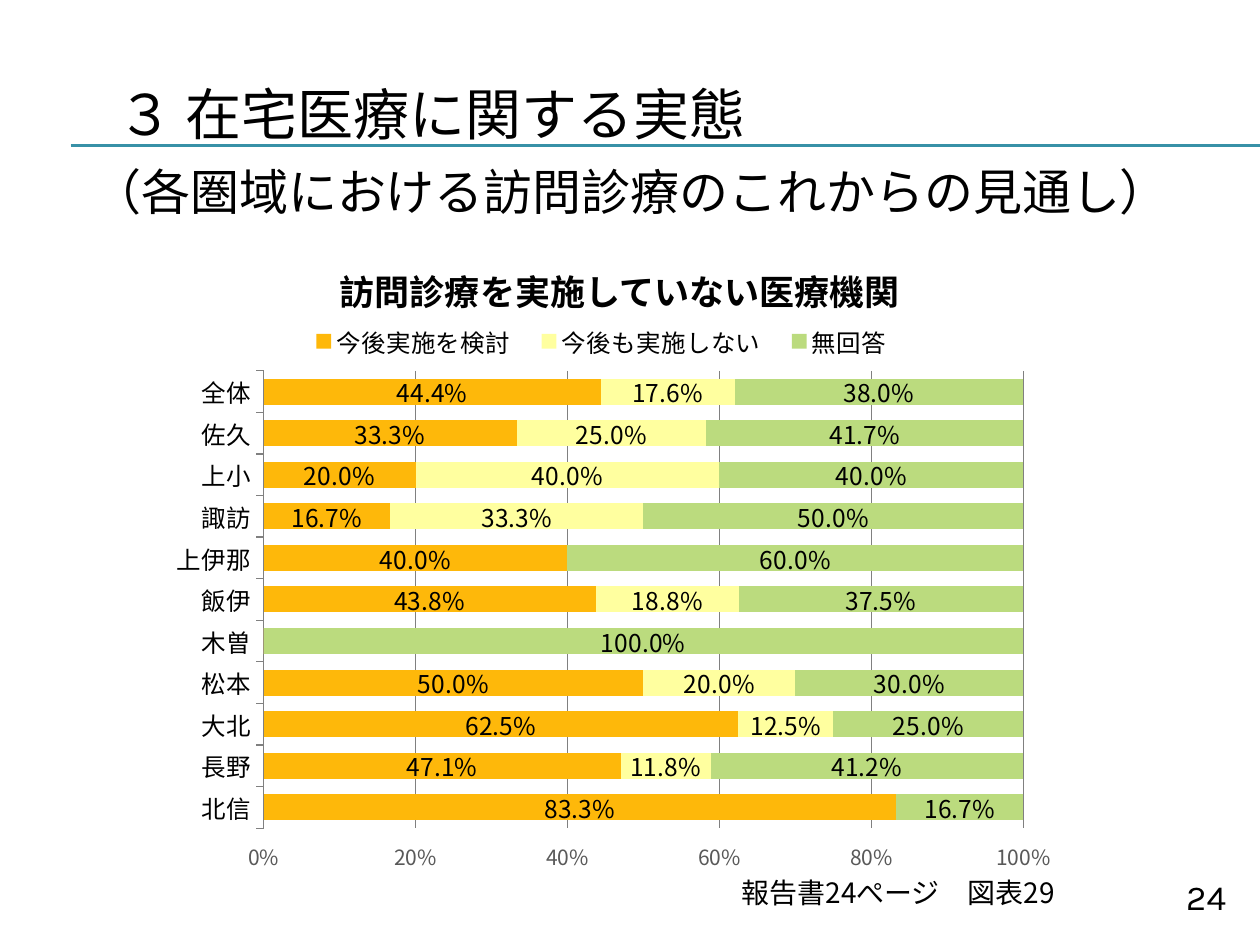
from dataclasses import dataclass

from lxml.etree import SubElement
from pptx import Presentation
from pptx.chart.data import CategoryChartData
from pptx.dml.color import RGBColor
from pptx.enum.chart import (XL_CHART_TYPE, XL_LABEL_POSITION, XL_LEGEND_POSITION,
                             XL_TICK_LABEL_POSITION, XL_TICK_MARK)
from pptx.enum.shapes import MSO_CONNECTOR
from pptx.enum.text import MSO_ANCHOR, PP_ALIGN
from pptx.oxml import parse_xml
from pptx.oxml.ns import nsdecls, qn
from pptx.util import Inches, Pt


@dataclass(frozen=True)
class Theme:
    text: str = "000000"
    muted: str = "595959"
    rule: str = "3891A7"
    grid: str = "808080"
    series: tuple = ("FEB80A", "FFFF9F", "BBDB7E")
    cjk: str = "Noto Sans CJK JP"
    latin: str = "Karla"
    title: int = 32
    subtitle: int = 28
    heading: int = 20
    source: int = 16
    label: int = 14
    axis: int = 12
    base: int = 9


THEME = Theme()
AREAS = ["全体", "佐久", "上小", "諏訪", "上伊那", "飯伊",
         "木曽", "松本", "大北", "長野", "北信"]
ANSWERS = {
    "今後実施を検討": [0.444, 0.333, 0.2, 0.167, 0.4, 0.438, 0, 0.5, 0.625, 0.471, 0.833],
    "今後も実施しない": [0.176, 0.25, 0.4, 0.333, 0, 0.188, 0, 0.2, 0.125, 0.118, 0],
    "無回答": [0.38, 0.417, 0.4, 0.5, 0.6, 0.375, 1, 0.3, 0.25, 0.412, 0.167],
}


def set_attrs(obj, **values):
    for name, value in values.items():
        setattr(obj, name, value)


def set_font(font, size, name=THEME.cjk, color=THEME.text, bold=False):
    set_attrs(font, size=Pt(size), name=name, bold=bold)
    font.color.rgb = RGBColor.from_string(color)


def set_line(line, color):
    line.color.rgb = RGBColor.from_string(color)
    line.width = Pt(0.75)


def write(sp, text, size, name=THEME.cjk, bold=False, align=PP_ALIGN.LEFT,
          anchor=MSO_ANCHOR.TOP, before=0):
    tf = sp.text_frame
    set_attrs(tf, word_wrap=True, vertical_anchor=anchor)
    p = tf.paragraphs[0]
    set_attrs(p, alignment=align, space_before=Pt(before))
    r = p.add_run()
    r.text = text
    set_font(r.font, size, name, bold=bold)
    SubElement(r._r.get_or_add_rPr(), qn("a:ea"), typeface=THEME.cjk)


def add_text(s, box, text, size, **style):
    write(s.shapes.add_textbox(*map(Inches, box)), text, size, **style)


def add_header(s, box):
    """Place the double rule, the title above it and the subtitle below it."""
    x, y, w, h = box
    for offset in (0.71, 0.72):
        ends = (x + 0.13, y + offset, x + w, y + offset)
        rule = s.shapes.add_connector(MSO_CONNECTOR.STRAIGHT, *map(Inches, ends))
        set_line(rule.line, THEME.rule)
        SubElement(rule._element.spPr, qn("a:effectLst"))
    title = s.shapes.title
    set_attrs(title, left=Inches(x + 0.4), top=Inches(y),
              width=Inches(9.5), height=Inches(0.92))
    write(title, "３ 在宅医療に関する実態", THEME.title, anchor=MSO_ANCHOR.MIDDLE)
    add_text(s, (x, y + 0.79, 9.15, 0.57), "（各圏域における訪問診療のこれからの見通し）",
             THEME.subtitle, name=THEME.latin, align=PP_ALIGN.CENTER)


def set_layout(element, after, x, y, w, h, inner=False):
    """Fix a chart part at fractions of the chart area."""
    for old in element.findall(qn("c:layout")):
        element.remove(old)
    target = '<c:layoutTarget val="inner"/>' if inner else ""
    modes = "".join(f'<c:{side}Mode val="edge"/>' for side in "xy")
    sizes = "".join(f'<c:{k} val="{v}"/>' for k, v in zip("xywh", (x, y, w, h)))
    layout = parse_xml(f'<c:layout {nsdecls("c")}><c:manualLayout>{target}{modes}{sizes}'
                       '</c:manualLayout></c:layout>')
    if after is None:
        element.insert(0, layout)
    else:
        after.addnext(layout)


def format_axes(chart):
    areas, shares = chart.category_axis, chart.value_axis
    set_attrs(areas, reverse_order=True, has_major_gridlines=False,
              major_tick_mark=XL_TICK_MARK.OUTSIDE)
    set_line(areas.format.line, THEME.grid)
    set_font(areas.tick_labels.font, THEME.label)
    set_attrs(shares, minimum_scale=0, maximum_scale=1, major_unit=0.2,
              has_major_gridlines=True, major_tick_mark=XL_TICK_MARK.NONE,
              tick_label_position=XL_TICK_LABEL_POSITION.HIGH)
    set_line(shares.major_gridlines.format.line, THEME.grid)
    shares.format.line.fill.background()
    set_attrs(shares.tick_labels, number_format="0%", number_format_is_linked=False)
    set_font(shares.tick_labels.font, THEME.axis, color=THEME.muted)


def format_series(series, color):
    """Colour one answer and label every share except zero."""
    series.format.fill.solid()
    series.format.fill.fore_color.rgb = RGBColor.from_string(color)
    labels = series.data_labels
    set_attrs(labels, show_value=True, number_format="0.0%",
              number_format_is_linked=False, position=XL_LABEL_POSITION.CENTER)
    set_font(labels.font, THEME.label)
    zeros = [i for i, value in enumerate(series.values) if value == 0]
    for place, i in enumerate(zeros):
        labels._element.insert(place, parse_xml(
            f'<c:dLbl {nsdecls("c")}><c:idx val="{i}"/><c:delete val="1"/></c:dLbl>'))


def add_share_chart(s, box):
    x, y, w, h = box
    data = CategoryChartData(number_format="0.0%")
    data.categories = AREAS
    for answer, shares in ANSWERS.items():
        data.add_series(answer, shares)
    chart = s.shapes.add_chart(XL_CHART_TYPE.BAR_STACKED_100,
                               *map(Inches, box), data).chart
    set_attrs(chart, has_title=False, has_legend=True)
    set_font(chart.font, THEME.base, THEME.latin)
    set_attrs(chart.legend, position=XL_LEGEND_POSITION.TOP, include_in_layout=False)
    set_font(chart.legend.font, THEME.label)
    legend = chart.legend._element
    set_layout(legend, legend.find(qn("c:legendPos")), 0.18, 0.12, 0.61, 0.06)
    plot = chart.plots[0]
    set_attrs(plot, gap_width=60, overlap=100, vary_by_categories=False)
    set_layout(plot._element.getparent(), None, 0.15, 0.196, 0.753, 0.709, inner=True)
    format_axes(chart)
    for series, color in zip(plot.series, THEME.series):
        format_series(series, color)
    add_text(s, (x + 0.8, y + 0.16, 6.46, 0.77), "訪問診療を実施していない医療機関",
             THEME.heading, bold=True, align=PP_ALIGN.CENTER)


def add_footer(s, box):
    """Place the source note and the page number."""
    x, y, w, h = box
    add_text(s, (x + w - 0.78, y, 0.83, h), "24", THEME.heading,
             name=THEME.latin, align=PP_ALIGN.RIGHT)
    add_text(s, (x, y, w, 0.39), "報告書24ぺージ　図表29", THEME.source, before=3)


def main():
    prs = Presentation()
    set_attrs(prs, slide_width=Inches(10), slide_height=Inches(7.5))
    s = prs.slides.add_slide(prs.slide_layouts[5])
    add_header(s, (0.43, 0.44, 9.57, 1.36))
    add_share_chart(s, (0.89, 1.94, 8.01, 5.12))
    add_footer(s, (5.79, 6.9, 3.99, 0.45))
    prs.save("out.pptx")


if __name__ == "__main__":
    main()
